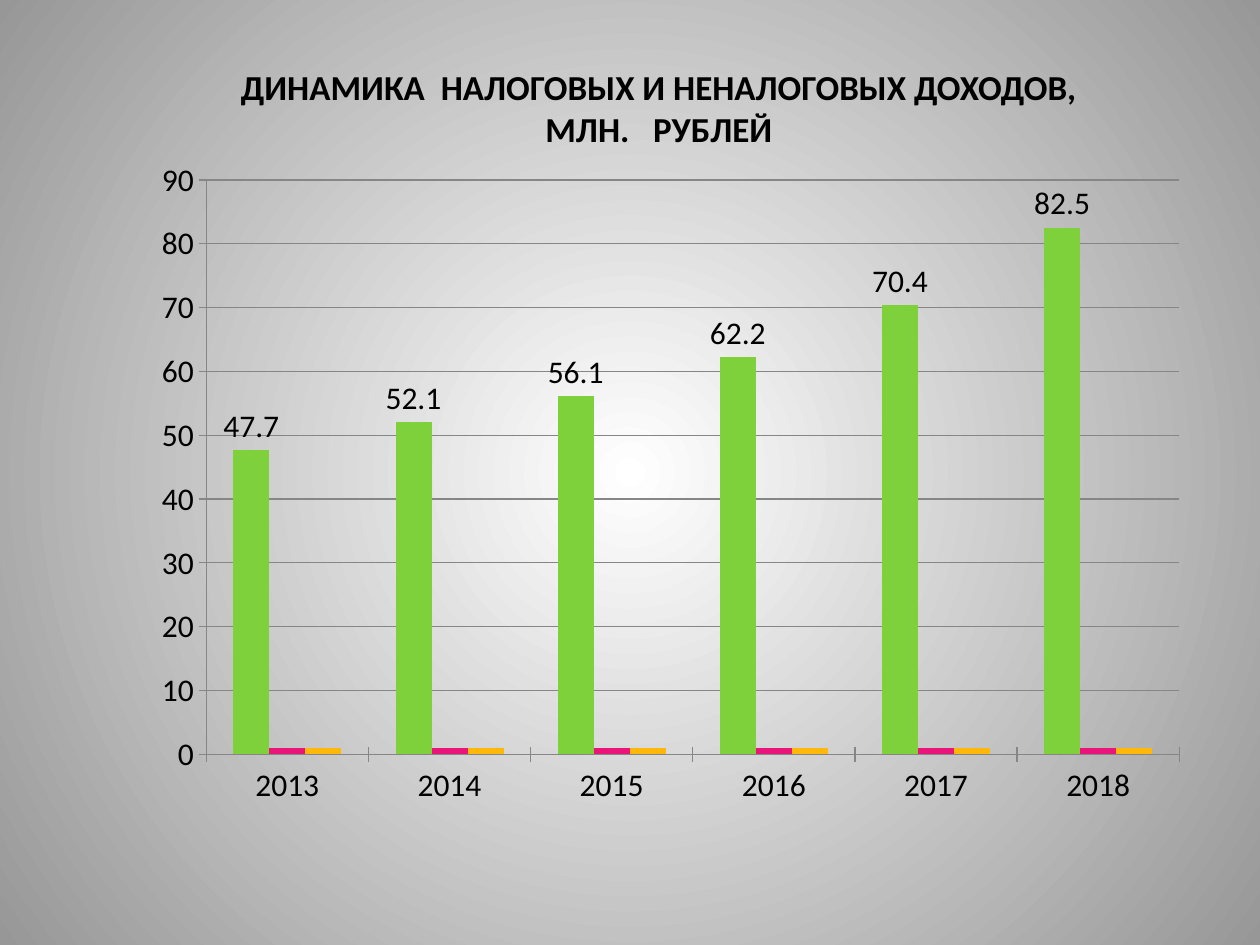
"""Build a slide with a column chart of tax and non-tax revenues by year."""
import lxml.etree
import pptx
import pptx.chart.data
import pptx.dml.color
import pptx.enum.chart
import pptx.enum.text
import pptx.oxml
import pptx.oxml.ns
import pptx.util

Inches = pptx.util.Inches
qn = pptx.oxml.ns.qn
COLORS = {
    "text": "000000", "center": "FFFFFF", "edge": "979797", "grid": "868686",
    "Series 1": "7FD13B", "Series 2": "EA157A", "Series 3": "FEB80A",
}
FONT = {"name": "Calibri", "size": pptx.util.Pt(18), "bold": False}
TITLE_FONT = FONT | {"size": pptx.util.Pt(20), "bold": True}
TITLE_LINES = ["ДИНАМИКА  НАЛОГОВЫХ И НЕНАЛОГОВЫХ ДОХОДОВ,", "МЛН.   РУБЛЕЙ"]
YEARS = ["2013", "2014", "2015", "2016", "2017", "2018"]
REVENUES = {
    "Series 1": [47.7, 52.1, 56.1, 62.2, 70.4, 82.5],
    "Series 2": [1] * len(YEARS),
    "Series 3": [1] * len(YEARS),
}
PLOT_AREA = {"x": 0.13, "y": 0.06, "w": 0.86, "h": 0.81}


def color(name):
    return pptx.dml.color.RGBColor.from_string(COLORS[name])


def apply_format(target, values):
    for attribute, value in values.items():
        setattr(target, attribute, value)


presentation = pptx.Presentation()
apply_format(presentation, {"slide_width": Inches(10), "slide_height": Inches(7.5)})
slide = presentation.slides.add_slide(presentation.slide_layouts[6])

background = slide.background.fill
background.gradient()
for stop, name, position in zip(background.gradient_stops, ["center", "edge"], [0, 1]):
    stop.color.rgb = color(name)
    stop.position = position
gradient = slide.element.find(".//" + qn("a:gradFill"))
gradient.remove(gradient.find(qn("a:lin")))
circle = lxml.etree.SubElement(gradient, qn("a:path"), {"path": "circle"})
lxml.etree.SubElement(circle, qn("a:fillToRect"), {side: "50000" for side in "ltrb"})

title = slide.shapes.add_textbox(Inches(1.56), Inches(0.47), Inches(7.34), Inches(0.77))
title.text_frame.word_wrap = True
title.text_frame.text = "\n".join(TITLE_LINES)
for paragraph in title.text_frame.paragraphs:
    paragraph.alignment = pptx.enum.text.PP_ALIGN.CENTER
    apply_format(paragraph.runs[0].font, TITLE_FONT)
    paragraph.runs[0].font.color.rgb = color("text")

chart_data = pptx.chart.data.CategoryChartData()
chart_data.categories = YEARS
for name, values in REVENUES.items():
    chart_data.add_series(name, values)
chart = slide.shapes.add_chart(
    pptx.enum.chart.XL_CHART_TYPE.COLUMN_CLUSTERED,
    Inches(0.47), Inches(1.09), Inches(8.98), Inches(5.63), chart_data,
).chart
apply_format(chart, {"has_legend": False, "has_title": False})
apply_format(chart.font, FONT)
chart.font.color.rgb = color("text")

plot = chart.plots[0]
apply_format(plot, {"gap_width": 150, "overlap": 0, "vary_by_categories": False})
for series in plot.series:
    series.format.fill.solid()
    series.format.fill.fore_color.rgb = color(series.name)
apply_format(plot.series[0].data_labels, {
    "show_value": True,
    "position": pptx.enum.chart.XL_LABEL_POSITION.OUTSIDE_END,
})

apply_format(chart.value_axis, {
    "minimum_scale": 0, "maximum_scale": 90, "major_unit": 10, "has_major_gridlines": True,
})
for axis in (chart.category_axis, chart.value_axis):
    axis.major_tick_mark = pptx.enum.chart.XL_TICK_MARK.CROSS
for line in (
    chart.category_axis.format.line,
    chart.value_axis.format.line,
    chart.value_axis.major_gridlines.format.line,
):
    line.color.rgb = color("grid")
    line.width = pptx.util.Pt(0.75)

plot_area = chart.element.find(".//" + qn("c:plotArea"))
layout = plot_area.find(qn("c:layout"))
if layout is None:
    layout = pptx.oxml.parse_xml(f"<c:layout {pptx.oxml.ns.nsdecls('c')}/>")
    plot_area.insert(0, layout)
manual_layout = lxml.etree.SubElement(layout, qn("c:manualLayout"))
settings = {"layoutTarget": "inner", "xMode": "edge", "yMode": "edge"} | PLOT_AREA
for tag, value in settings.items():
    lxml.etree.SubElement(manual_layout, qn(f"c:{tag}"), {"val": str(value)})

presentation.save("out.pptx")
